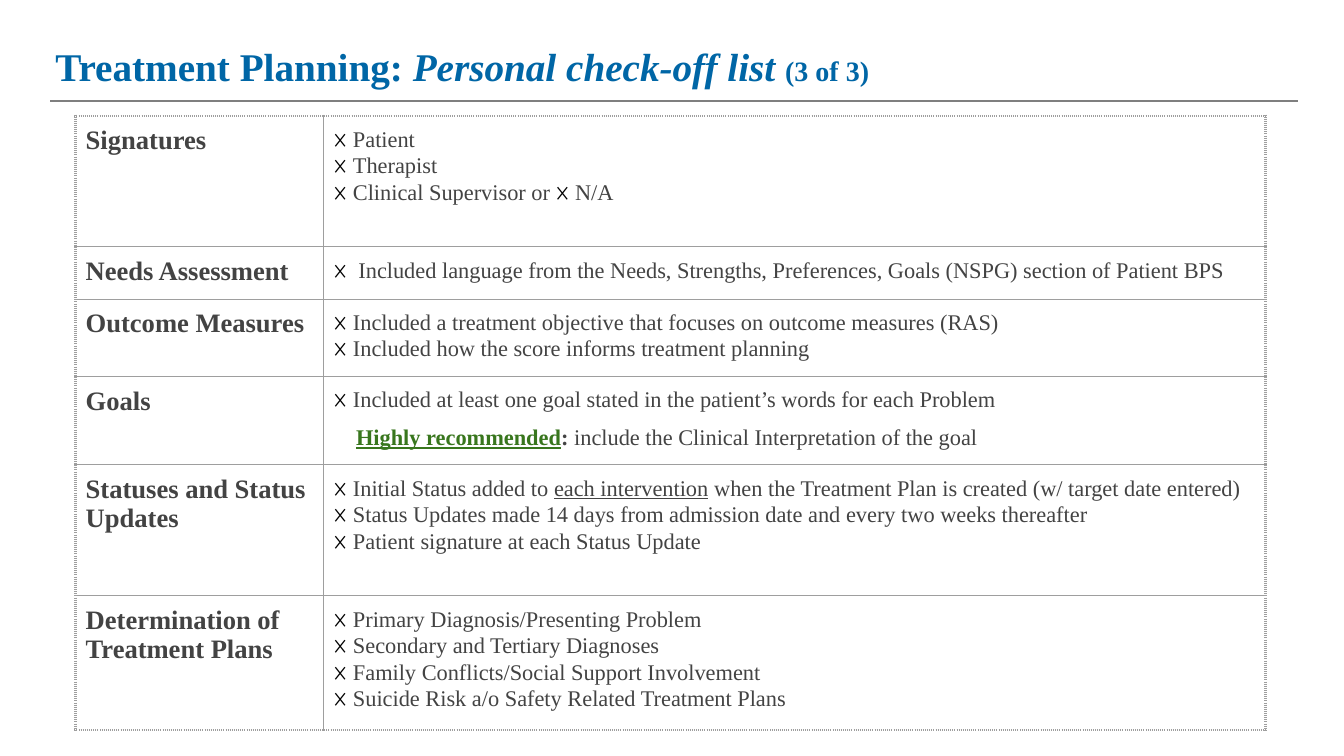
from typing import NamedTuple

import lxml.etree
import pptx
import pptx.dml.color
import pptx.enum.shapes
import pptx.enum.text
import pptx.oxml.ns
import pptx.util

BLUE = pptx.dml.color.RGBColor(0x00, 0x66, 0xA6)
INK = pptx.dml.color.RGBColor(0x43, 0x43, 0x43)
BLACK = pptx.dml.color.RGBColor(0x00, 0x00, 0x00)
GREEN = pptx.dml.color.RGBColor(0x38, 0x76, 0x1D)
RULE_GREY = pptx.dml.color.RGBColor(0x7F, 0x7F, 0x7F)
BORDER_GREY = pptx.dml.color.RGBColor(0x9E, 0x9E, 0x9E)

FONT = "Times New Roman"
CHECK = "𐄂"
SLIDE_WIDTH = pptx.util.Inches(13.33)
SLIDE_HEIGHT = pptx.util.Inches(7.5)
INSET = pptx.util.Inches(0.1)


class Run(NamedTuple):
    text: str
    size: float = 16
    color: pptx.dml.color.RGBColor = INK
    bold: bool = False
    italic: bool = False
    underline: bool = False


class Line(NamedTuple):
    runs: list[Run]
    indent: float = 0
    hanging: float = 0
    space_before: float = 0


class Section(NamedTuple):
    heading: str
    height: float
    lines: list[Line]


def across(percent: float) -> pptx.util.Emu:
    return pptx.util.Emu(round(SLIDE_WIDTH * percent / 100))


def down(percent: float) -> pptx.util.Emu:
    return pptx.util.Emu(round(SLIDE_HEIGHT * percent / 100))


def check(*runs: Run) -> Line:
    return Line([Run(f"{CHECK} ", 17, BLACK), *runs])


def checks(*items: str) -> list[Line]:
    return [check(Run(item)) for item in items]


TITLE = Line([
    Run("Treatment Planning: ", 28, BLUE, bold=True),
    Run("Personal check-off list ", 28, BLUE, bold=True, italic=True),
    Run("(3 of 3)", 20, BLUE, bold=True),
])

SECTIONS = [
    Section("Signatures", 17.33, [
        *checks("Patient", "Therapist"),
        check(Run("Clinical Supervisor or "), Run(f"{CHECK} ", 17, BLACK), Run("N/A")),
    ]),
    Section("Needs Assessment", 6.67, [
        Line([
            Run(CHECK, 17, BLACK),
            Run("\tIncluded language from the Needs, Strengths, Preferences, Goals (NSPG) "
                "section of Patient BPS"),
        ], indent=1.84, hanging=1.84),
    ]),
    Section("Outcome Measures", 10, checks(
        "Included a treatment objective that focuses on outcome measures (RAS)",
        "Included how the score informs treatment planning",
    )),
    Section("Goals", 11.47, [
        *checks("Included at least one goal stated in the patient’s words for each Problem"),
        Line([
            Run("Highly recommended", color=GREEN, bold=True, underline=True),
            Run(": ", bold=True),
            Run("include the Clinical Interpretation of the goal"),
        ], indent=1.67, space_before=9),
    ]),
    Section("Statuses and Status Updates", 17.33, [
        check(
            Run("Initial Status added to "),
            Run("each intervention", underline=True),
            Run(" when the Treatment Plan is created (w/ target date entered)"),
        ),
        *checks(
            "Status Updates made 14 days from admission date and every two weeks thereafter",
            "Patient signature at each Status Update",
        ),
    ]),
    Section("Determination of Treatment Plans", 17.33, checks(
        "Primary Diagnosis/Presenting Problem",
        "Secondary and Tertiary Diagnoses",
        "Family Conflicts/Social Support Involvement",
        "Suicide Risk a/o Safety Related Treatment Plans",
    )),
]


def write(frame: pptx.text.text.TextFrame, lines: list[Line]) -> None:
    for index, line in enumerate(lines):
        paragraph = frame.add_paragraph() if index else frame.paragraphs[0]
        if line.indent:
            properties = paragraph._p.get_or_add_pPr()
            properties.set("marL", str(across(line.indent)))
            properties.set("indent", str(-across(line.hanging)))
        if line.space_before:
            paragraph.space_before = pptx.util.Pt(line.space_before)
        paragraph.font.name = FONT
        for part in line.runs:
            run = paragraph.add_run()
            run.text = part.text
            run.font.size = pptx.util.Pt(part.size)
            run.font.color.rgb = part.color
            run.font.bold = part.bold
            run.font.italic = part.italic
            run.font.underline = part.underline


def set_borders(cell: pptx.table._Cell, outer: dict[str, bool]) -> None:
    properties = cell._tc.get_or_add_tcPr()
    for side, dotted in outer.items():
        border = lxml.etree.SubElement(properties, pptx.oxml.ns.qn(f"a:ln{side}"))
        border.set("w", str(pptx.util.Pt(2.25 if dotted else 0.75)))
        fill = lxml.etree.SubElement(border, pptx.oxml.ns.qn("a:solidFill"))
        lxml.etree.SubElement(fill, pptx.oxml.ns.qn("a:srgbClr")).set("val", str(BORDER_GREY))
        dash = lxml.etree.SubElement(border, pptx.oxml.ns.qn("a:prstDash"))
        dash.set("val", "dot" if dotted else "solid")


def add_title(slide: pptx.slide.Slide) -> None:
    rule = slide.shapes.add_connector(
        pptx.enum.shapes.MSO_CONNECTOR.STRAIGHT,
        across(96.55), down(13.33), across(3.75), down(13.33),
    )
    rule.line.color.rgb = RULE_GREY
    rule.line.width = pptx.util.Pt(1.5)
    lxml.etree.SubElement(rule._element.spPr, pptx.oxml.ns.qn("a:effectLst"))

    title = slide.shapes.add_textbox(across(3.38), down(4.27), across(73.22), down(6.8))
    frame = title.text_frame
    frame.word_wrap = True
    frame.vertical_anchor = pptx.enum.text.MSO_ANCHOR.TOP
    frame.margin_left = frame.margin_right = INSET
    frame.margin_top = frame.margin_bottom = INSET
    write(frame, [TITLE])


def add_checklist(slide: pptx.slide.Slide) -> None:
    column_widths = (18.45, 70.07)
    checklist = slide.shapes.add_table(
        len(SECTIONS), len(column_widths), across(5.63), down(15.33),
        across(sum(column_widths)), down(sum(section.height for section in SECTIONS)),
    ).table
    checklist.first_row = False
    checklist.horz_banding = False
    for column, width in zip(checklist.columns, column_widths):
        column.width = across(width)
    for row, section in enumerate(SECTIONS):
        checklist.rows[row].height = down(section.height)
        heading = Line([Run(section.heading, 19, bold=True)])
        for column, lines in enumerate(([heading], section.lines)):
            cell = checklist.cell(row, column)
            set_borders(cell, {
                "L": column == 0,
                "R": column == len(column_widths) - 1,
                "T": row == 0,
                "B": row == len(SECTIONS) - 1,
            })
            cell.fill.background()
            cell.margin_left = cell.margin_right = INSET
            cell.margin_top = cell.margin_bottom = INSET
            write(cell.text_frame, lines)


def main() -> None:
    presentation = pptx.Presentation()
    presentation.slide_width = SLIDE_WIDTH
    presentation.slide_height = SLIDE_HEIGHT
    slide = presentation.slides.add_slide(presentation.slide_layouts[6])
    add_title(slide)
    add_checklist(slide)
    presentation.save("out.pptx")


if __name__ == "__main__":
    main()
